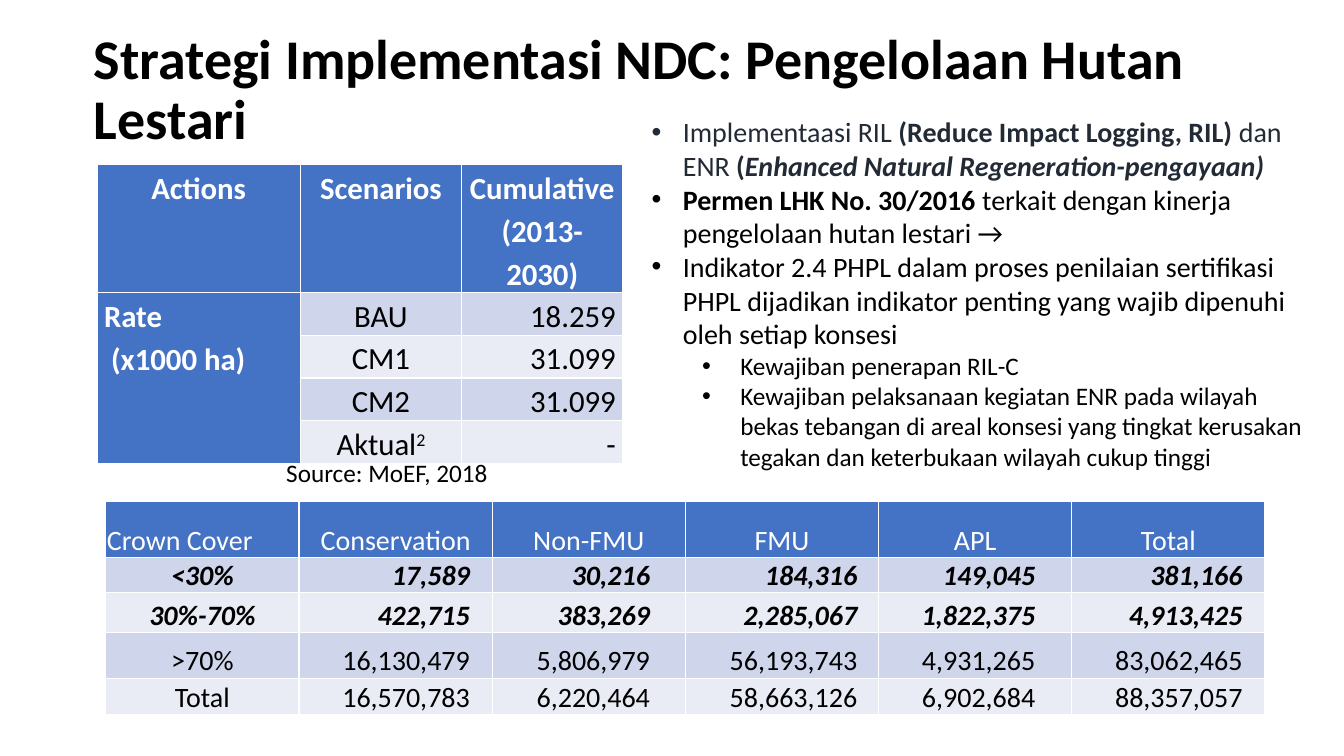
from lxml.etree import SubElement
from pptx import Presentation
from pptx.dml.color import RGBColor
from pptx.enum.text import MSO_ANCHOR as Anchor, PP_ALIGN as Align
from pptx.oxml.ns import qn
from pptx.util import Inches, Pt

BLACK = RGBColor(0x00, 0x00, 0x00)
WHITE = RGBColor(0xFF, 0xFF, 0xFF)
SLATE = RGBColor(0x22, 0x2A, 0x35)
BLUE = RGBColor(0x44, 0x72, 0xC4)
BANDS = (RGBColor(0xCF, 0xD5, 0xEA), RGBColor(0xE9, 0xEB, 0xF5))
FONT = "Calibri"
COLUMNS, ROWS = 160, 90
GRID = Inches(1 / 12)

ACTIONS = [
    ["Actions", "Scenarios", "Cumulative\n(2013-2030)"],
    ["Rate", "BAU", "18.259"],
    ["", "CM1", "31.099"],
    ["", "CM2", "31.099"],
    ["", "Aktual", "-"],
]
CROWN_COVER = [
    ["Crown Cover", "Conservation", "Non-FMU", "FMU", "APL", "Total"],
    ["<30%", "17,589", "30,216", "184,316", "149,045", "381,166"],
    ["30%-70%", "422,715", "383,269", "2,285,067", "1,822,375", "4,913,425"],
    [">70%", "16,130,479", "5,806,979", "56,193,743", "4,931,265", "83,062,465"],
    ["Total", "16,570,783", "6,220,464", "58,663,126", "6,902,684", "88,357,057"],
]
NUMBER_INSETS = [0.01, 0.22, 0.35, 0.21, 0.36, 0.22]
STRONG = {"bold": True, "color": SLATE}
MEASURES = [
    (0, [("Implementaasi RIL ", {"color": SLATE}),
         ("(Reduce Impact Logging, RIL)", STRONG),
         (" dan ENR ", {"color": SLATE}),
         ("(", STRONG),
         ("Enhanced Natural Regeneration-pengayaan)", {**STRONG, "italic": True})]),
    (0, [("Permen LHK No. 30/2016 ", {"bold": True}),
         ("terkait dengan kinerja pengelolaan hutan lestari →", {})]),
    (0, [("Indikator 2.4 PHPL dalam proses penilaian sertifikasi PHPL dijadikan "
          "indikator penting yang wajib dipenuhi oleh setiap konsesi", {})]),
    (1, [("Kewajiban penerapan RIL-C", {})]),
    (1, [("Kewajiban pelaksanaan kegiatan ENR pada wilayah bekas tebangan di areal "
          "konsesi yang tingkat kerusakan tegakan dan keterbukaan wilayah cukup "
          "tinggi", {})]),
]


def add_text(para, text, size=20, color=BLACK, bold=False, italic=False, raised=False):
    """Append text to a paragraph; a newline becomes a line break."""
    for number, line in enumerate(text.split("\n")):
        if number:
            para.add_line_break()
        span = para.add_run()
        span.text = line
        font = span.font
        font.name, font.size, font.bold, font.italic = FONT, Pt(size), bold, italic
        font.color.rgb = color
        if raised:
            font._element.set("baseline", "30000")


def indent(para, left, first=0.0, bullet=None):
    properties = para._p.get_or_add_pPr()
    properties.set("marL", str(Inches(left)))
    properties.set("indent", str(Inches(first)))
    if bullet:
        SubElement(properties, qn("a:buFont"), typeface="Arial")
        SubElement(properties, qn("a:buChar"), char=bullet)


class Page:
    """One slide with a shared grid and style."""

    def __init__(self, deck):
        self.slide = deck.slides.add_slide(deck.slide_layouts[6])

    def text_box(self, left, top, width, height, wrap=True, anchor=Anchor.TOP):
        box = self.slide.shapes.add_textbox(
            *(round(GRID * length) for length in (left, top, width, height)))
        frame = box.text_frame
        frame.word_wrap, frame.vertical_anchor = wrap, anchor
        return frame

    def bullets(self, place, items):
        frame = self.text_box(*place)
        for number, (level, spans) in enumerate(items):
            para = frame.add_paragraph() if number else frame.paragraphs[0]
            para.level = level
            left, hang = ((0.31, 0.31), (0.88, 0.38))[level]
            indent(para, left, -hang, "•")
            for text, style in spans:
                add_text(para, text, size=20 - 2 * level, **style)

    def table(self, left, top, widths, heights, margins, anchor):
        """Add a table with a blue header and banded rows."""
        lengths = (left, top, sum(widths), sum(heights))
        table = self.slide.shapes.add_table(
            len(heights), len(widths),
            *(round(GRID * length) for length in lengths)).table
        for column, width in zip(table.columns, widths):
            column.width = round(GRID * width)
        for number, (row, height) in enumerate(zip(table.rows, heights)):
            row.height = round(GRID * height)
            for cell in row.cells:
                cell.fill.solid()
                cell.fill.fore_color.rgb = BANDS[(number - 1) % 2] if number else BLUE
                cell.vertical_anchor = anchor
                (cell.margin_left, cell.margin_top, cell.margin_right,
                 cell.margin_bottom) = (Inches(margin) for margin in margins)
        return table


def add_actions(page):
    table = page.table(11.55, 19.6, [24.2, 19.2, 19.2], [15.2] + [5.1] * 4,
                       (0.07, 0, 0.07, 0), Anchor.TOP)
    rate = table.cell(1, 0)
    rate.merge(table.cell(4, 0))
    rate.fill.fore_color.rgb = BLUE
    for r, values in enumerate(ACTIONS):
        for c, value in enumerate(values):
            if not value:
                continue
            head = r == 0 or c == 0
            para = table.cell(r, c).text_frame.paragraphs[0]
            para.line_spacing = 1.15
            para.alignment = (Align.CENTER if r == 0
                              else (Align.LEFT, Align.CENTER, Align.RIGHT)[c])
            add_text(para, value, size=22, color=WHITE if head else BLACK, bold=head)
    unit = rate.text_frame.add_paragraph()
    unit.line_spacing = 1.15
    indent(unit, 0.07)
    add_text(unit, "(x1000 ha)", size=22, color=WHITE, bold=True)
    add_text(table.cell(4, 1).text_frame.paragraphs[0], "2", size=22, raised=True)


def add_crown_cover(page):
    table = page.table(12.6, 59.7, [23] * 6, [6.7, 4.1, 4.8, 5.4, 4.4],
                       (0.01, 0.01, 0.01, 0), Anchor.BOTTOM)
    for r, values in enumerate(CROWN_COVER):
        for c, value in enumerate(values):
            cell = table.cell(r, c)
            para = cell.text_frame.paragraphs[0]
            para.alignment = Align.CENTER
            if r == c == 0:
                para.alignment = Align.LEFT
            elif r and c:
                para.alignment = Align.RIGHT
                cell.margin_right = Inches(NUMBER_INSETS[c])
            strong = r in (1, 2)
            add_text(para, value, color=BLACK if r else WHITE, bold=strong, italic=strong)


def main():
    deck = Presentation()
    deck.slide_width, deck.slide_height = GRID * COLUMNS, GRID * ROWS
    page = Page(deck)
    title = page.text_box(10, 2.2, 140.6, 17.4, anchor=Anchor.MIDDLE).paragraphs[0]
    title.line_spacing = 0.9
    add_text(title, "Strategi Implementasi NDC: Pengelolaan Hutan Lestari", size=40, bold=True)
    add_actions(page)
    page.bullets((76.4, 13.1, 80.2, 56.2), MEASURES)
    add_crown_cover(page)
    source = page.text_box(32.9, 53.9, 26.6, 4.8, wrap=False).paragraphs[0]
    add_text(source, "Source: MoEF, 2018", size=18)
    deck.save("out.pptx")


if __name__ == "__main__":
    main()
